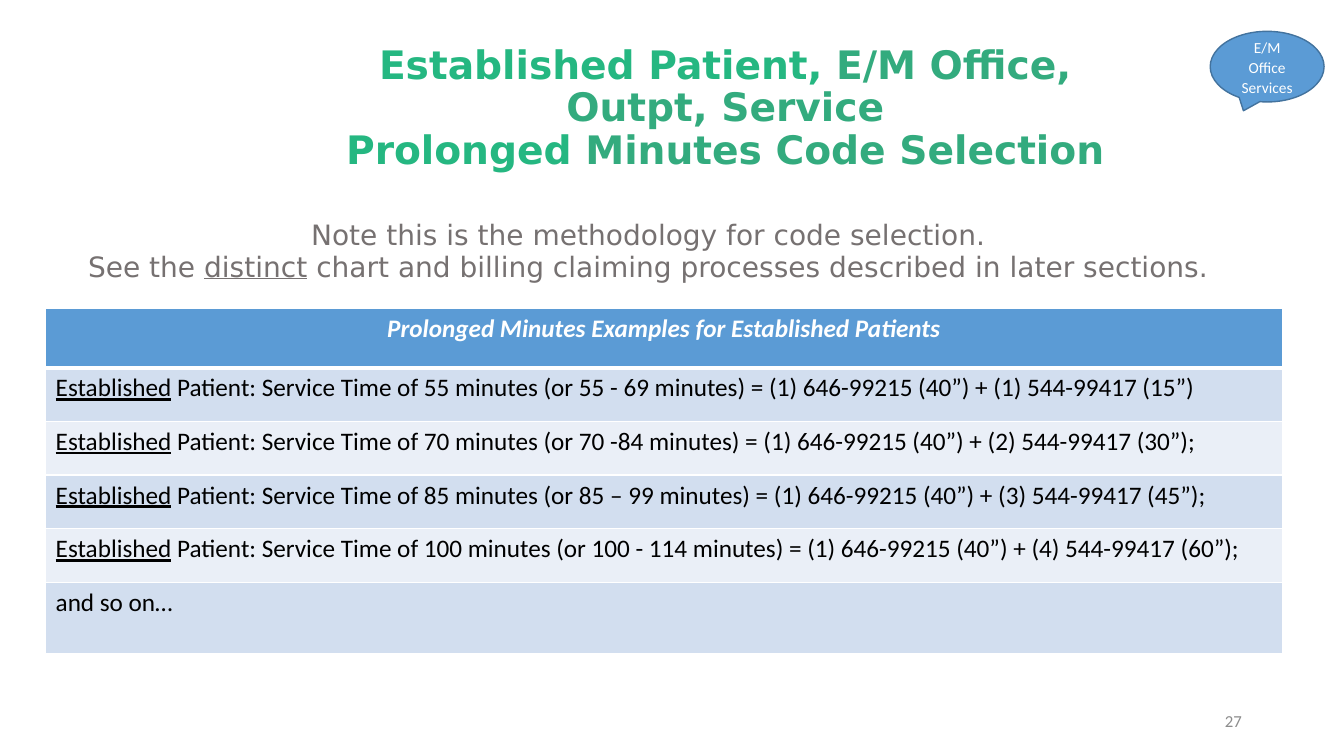
"""Build the slide on prolonged minutes for established patients."""
import copy
import dataclasses
import typing

import pptx
import pptx.dml.color
import pptx.enum.shapes
import pptx.enum.text
import pptx.oxml
import pptx.oxml.ns
import pptx.util

Cm = pptx.util.Cm
Pt = pptx.util.Pt
ALIGN = pptx.enum.text.PP_ALIGN
ANCHOR = pptx.enum.text.MSO_ANCHOR

HUES = {
    "mint": "25B781", "green": "33AB7E", "gray": "767171", "pale": "8C8C8C",
    "blue": "5B9BD5", "edge": "43739E", "band": "D2DEEF", "light": "EAEFF7",
    "white": "FFFFFF", "black": "000000",
}
HEAD = {"name": "DejaVu Sans", "size": Pt(28), "bold": True}
NOTE = {"name": "DejaVu Sans", "size": Pt(20), "bold": False}
CELL = {"name": "Calibri", "size": Pt(18), "bold": False, "italic": False}
TOP = CELL | {"bold": True, "italic": True}
PAGE = {"name": "Calibri", "size": Pt(12)}
CALL = {"name": "Calibri", "size": Pt(11)}


@dataclasses.dataclass
class Run:
    text: str
    hue: str
    line: bool = False
    cut: bool = False


@dataclasses.dataclass
class Row:
    runs: list[Run]
    fill: str
    high: float
    font: dict[str, typing.Any]
    align: ALIGN = ALIGN.LEFT
    base: int = 1


def apply(item: typing.Any, look: dict[str, typing.Any]) -> None:
    for key, value in look.items():
        setattr(item, key, value)


def tone(hue: str) -> pptx.dml.color.RGBColor:
    return pptx.dml.color.RGBColor.from_string(HUES[hue])


def paint(fill: typing.Any, hue: str) -> None:
    fill.solid()
    fill.fore_color.rgb = tone(hue)


def place(item: typing.Any, x: float, y: float, w: float, h: float) -> None:
    apply(item, {"left": Cm(x), "top": Cm(y), "width": Cm(w), "height": Cm(h)})


def frame(item: typing.Any, anchor: ANCHOR) -> typing.Any:
    text = item.text_frame
    apply(text, {"word_wrap": True, "vertical_anchor": anchor,
                 "auto_size": pptx.enum.text.MSO_AUTO_SIZE.NONE})
    return text


def write(para: typing.Any, runs: list[Run], font: dict[str, typing.Any],
          look: dict[str, typing.Any]) -> None:
    apply(para, look)
    for part in runs:
        run = para.add_run()
        run.text = part.text
        apply(run.font, font | {"underline": part.line})
        run.font.color.rgb = tone(part.hue)
        if part.cut:
            para.add_line_break()
            para._p[-1].append(copy.deepcopy(run.font._element))


def rule(cell: typing.Any, base: int) -> None:
    space = pptx.oxml.ns.nsdecls("a")
    for side, wide in {"L": 1, "R": 1, "T": 1, "B": base}.items():
        cell._tc.get_or_add_tcPr().append(pptx.oxml.parse_xml(
            f'<a:ln{side} {space} w="{Pt(wide)}"><a:solidFill>'
            f'<a:srgbClr val="{HUES["white"]}"/></a:solidFill></a:ln{side}>'))


def grid(slide: typing.Any, rows: list[Row]) -> None:
    high = sum(row.high for row in rows)
    table = slide.shapes.add_table(
        len(rows), 1, Cm(1.15), Cm(7.77), Cm(31.16), Cm(high)).table
    for spot, row in enumerate(rows):
        table.rows[spot].height = Cm(row.high)
        cell = table.cell(spot, 0)
        rule(cell, row.base)
        paint(cell.fill, row.fill)
        write(cell.text_frame.paragraphs[0], row.runs, row.font,
              {"alignment": row.align})


def cases() -> list[Row]:
    sets = [
        ("55 minutes (or 55 - 69 minutes)", "(1) 544-99417 (15”)"),
        ("70 minutes (or 70 -84 minutes)", "(2) 544-99417 (30”);"),
        ("85 minutes (or 85 – 99 minutes)", "(3) 544-99417 (45”);"),
        ("100 minutes (or 100 - 114 minutes)", "(4) 544-99417 (60”);"),
    ]
    rows = [Row([Run("Prolonged Minutes Examples for Established Patients", "white")],
                "blue", 1.5, TOP, ALIGN.CENTER, 3)]
    for spot, (time, code) in enumerate(sets):
        tail = f" Patient: Service Time of {time} = (1) 646-99215 (40”) + {code}"
        rows.append(Row([Run("Established", "black", True), Run(tail, "black")],
                        ("band", "light")[spot % 2], 1.35, CELL))
    rows.append(Row([Run("and so on…", "black")], "band", 1.8, CELL))
    return rows


def main() -> None:
    deck = pptx.Presentation()
    apply(deck, {"slide_width": Cm(33.87), "slide_height": Cm(19.05)})
    slide = deck.slides.add_slide(deck.slide_layouts[0])

    title, body = slide.placeholders
    place(title, 8.13, 1.02, 20.29, 4.57)
    write(frame(title, ANCHOR.TOP).paragraphs[0], [
        Run("Established Patient, ", "mint"),
        Run("E/M Office, Outpt, Service", "green", cut=True),
        Run("Prolonged ", "mint"),
        Run("Minutes Code Selection", "green"),
    ], HEAD, {"alignment": ALIGN.CENTER, "line_spacing": 0.9})

    place(body, 1.15, 5.56, 30.38, 2.06)
    text = frame(body, ANCHOR.TOP)
    look = {"alignment": ALIGN.CENTER, "line_spacing": Pt(18), "space_before": Pt(0)}
    write(text.paragraphs[0],
          [Run("Note this is the methodology for code selection.", "gray")], NOTE, look)
    write(text.add_paragraph(), [
        Run("See the ", "gray"), Run("distinct", "gray", True),
        Run(" chart and billing claiming processes described in later sections.", "gray"),
    ], NOTE, look | {"space_before": Pt(5)})

    page = slide.shapes.add_textbox(Cm(23.93), Cm(17.65), Cm(7.62), Cm(1.02))
    write(frame(page, ANCHOR.MIDDLE).paragraphs[0], [Run("27", "pale")],
          PAGE, {"alignment": ALIGN.RIGHT})

    grid(slide, cases())

    call = slide.shapes.add_shape(
        pptx.enum.shapes.MSO_SHAPE.OVAL_CALLOUT, Cm(30.5), Cm(0.79), Cm(2.87), Cm(1.78))
    call.shadow.inherit = False
    paint(call.fill, "blue")
    paint(call.line.fill, "edge")
    call.line.width = Pt(1)
    write(frame(call, ANCHOR.MIDDLE).paragraphs[0], [Run("E/M Office Services", "white")],
          CALL, {"alignment": ALIGN.CENTER, "line_spacing": 1.07, "space_after": Pt(8)})
    deck.save("out.pptx")


if __name__ == "__main__":
    main()
